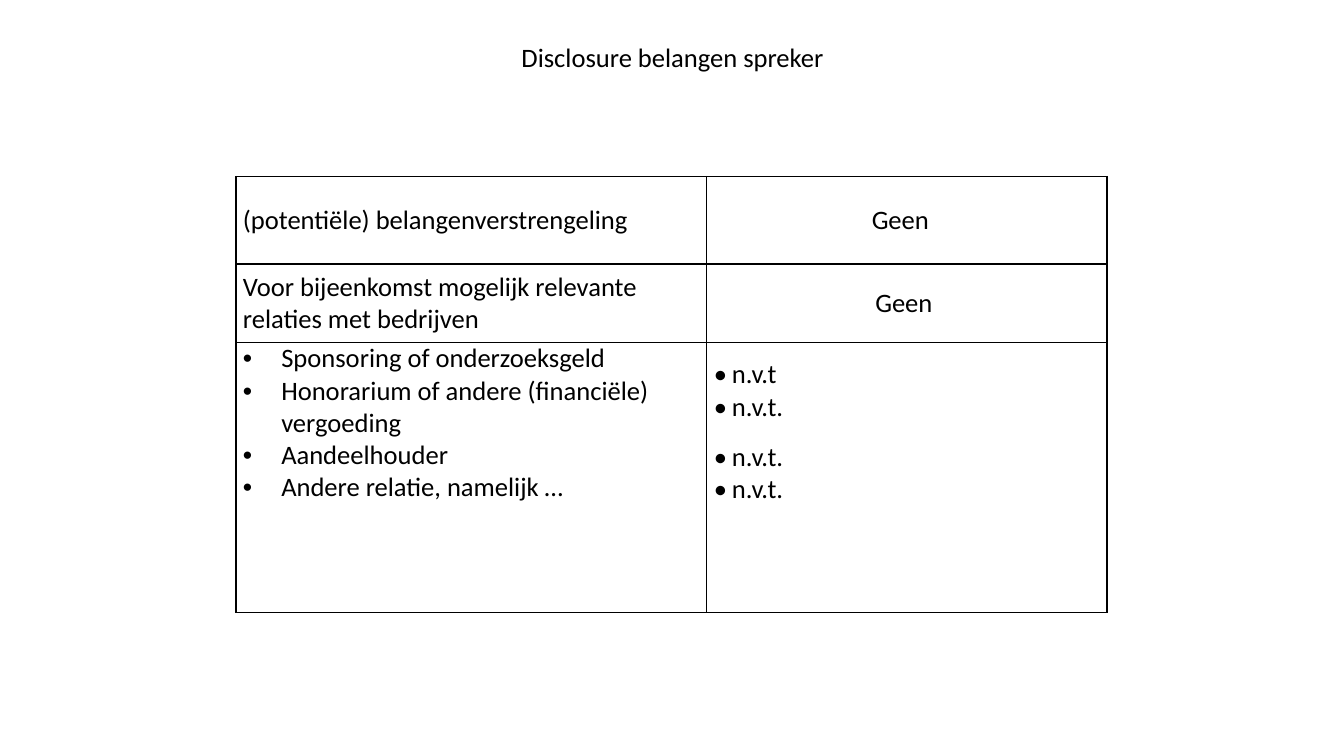
from pptx import Presentation
from pptx.dml.color import RGBColor
from pptx.enum.text import MSO_ANCHOR as Anchor, PP_ALIGN as Align
from pptx.oxml.ns import qn
from pptx.util import Inches, Pt
from lxml.etree import SubElement

BLACK = "000000"


def write(paragraph, text, align):
    paragraph.alignment = align
    run = paragraph.add_run()
    run.text = text
    for name, value in {"name": "Calibri", "size": Pt(19), "bold": False}.items():
        setattr(run.font, name, value)
    run.font.color.rgb = RGBColor.from_string(BLACK)


def add_bullet(paragraph, indent, font_name):
    properties = paragraph._p.get_or_add_pPr()
    properties.set("marL", str(Inches(indent)))
    properties.set("indent", str(-Inches(indent)))
    SubElement(properties, qn("a:buFont"), typeface=font_name)
    SubElement(properties, qn("a:buChar"), char="•")


presentation = Presentation()
presentation.slide_width = Inches(13.33)
presentation.slide_height = Inches(7.5)
slide = presentation.slides.add_slide(presentation.slide_layouts[5])

title = slide.shapes.title
title_place = {"left": 0.67, "top": 0.3, "width": 12, "height": 1.25}
for name, value in title_place.items():
    setattr(title, name, Inches(value))
title.text_frame.vertical_anchor = Anchor.TOP
title.text_frame.margin_top = Inches(0.11)
write(title.text_frame.paragraphs[0], "Disclosure belangen spreker", Align.CENTER)

interests = [
    "Sponsoring of onderzoeksgeld",
    "Honorarium of andere (financiële) vergoeding",
    "Aandeelhouder",
    "Andere relatie, namelijk …",
]
answers = ["n.v.t", "n.v.t.", "n.v.t.", "n.v.t."]
rows = [
    (["(potentiële) belangenverstrengeling"], ["Geen"]),
    (["Voor bijeenkomst mogelijk relevante relaties met bedrijven"], ["Geen"]),
    (interests, answers),
]
column_widths = [4.67, 3.97]
row_heights = [0.87, 0.78, 2.68]
answer_right_margins = [0.2, 0.13, 0.07]
bullet_styles = [(0.38, "Arial"), (0.18, "Calibri")]

frame = slide.shapes.add_table(
    len(rows), 2, Inches(2.34), Inches(1.75),
    Inches(sum(column_widths)), Inches(sum(row_heights)),
)
table = frame.table
table.first_row = False
table.horz_banding = False
for column, width in zip(table.columns, column_widths):
    column.width = Inches(width)
for row, height in zip(table.rows, row_heights):
    row.height = Inches(height)

for row_index, row in enumerate(rows):
    is_list = row_index == 2
    for column_index, lines in enumerate(row):
        is_answer = column_index == 1
        cell = table.cell(row_index, column_index)
        cell_format = {
            "margin_left": Inches(0.07),
            "margin_right": Inches(answer_right_margins[row_index] if is_answer else 0.07),
            "margin_top": Inches(0.16 if is_list and is_answer else 0),
            "margin_bottom": Inches(0),
            "vertical_anchor": Anchor.TOP if is_list else Anchor.MIDDLE,
        }
        for name, value in cell_format.items():
            setattr(cell, name, value)

        cell_properties = cell._tc.get_or_add_tcPr()
        for side in ("lnL", "lnR", "lnT", "lnB"):
            border = SubElement(cell_properties, qn(f"a:{side}"), w=str(Pt(1)))
            border_fill = SubElement(border, qn("a:solidFill"))
            SubElement(border_fill, qn("a:srgbClr"), val=BLACK)
        cell.fill.background()

        text_frame = cell.text_frame
        align = Align.CENTER if is_answer and not is_list else Align.LEFT
        for line_index, line in enumerate(lines):
            paragraph = text_frame.add_paragraph() if line_index else text_frame.paragraphs[0]
            if is_list:
                add_bullet(paragraph, *bullet_styles[column_index])
            if is_answer and line_index == 2:
                paragraph.space_before = Pt(13)
            write(paragraph, line, align)

presentation.save("out.pptx")
